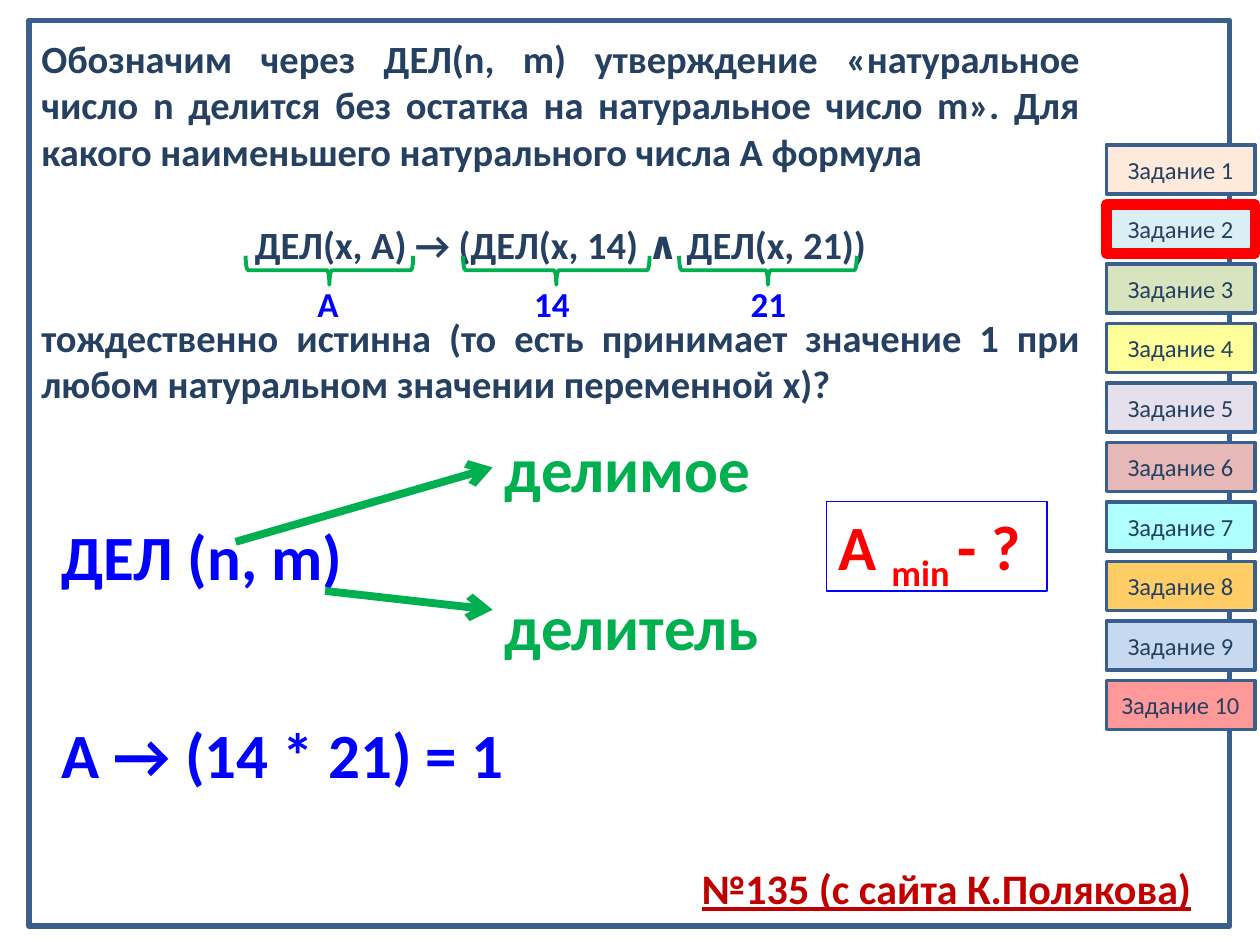
import pptx
import pptx.util
from pptx.dml.color import RGBColor
from pptx.enum.shapes import MSO_CONNECTOR, MSO_SHAPE
from pptx.enum.text import MSO_ANCHOR, MSO_AUTO_SIZE, PP_ALIGN
from pptx.oxml.ns import qn
from lxml import etree

COLS, ROWS = 100, 75
NAVY, STEEL = "254061", "3A5F8C"
BLUE, GREEN, RED, CRIMSON = "0000FF", "00B050", "FF0000", "C00000"

prs = pptx.Presentation()
prs.slide_width = pptx.util.Inches(10)
prs.slide_height = pptx.util.Inches(7.5)
s = prs.slides.add_slide(prs.slide_layouts[6])


def rgb(color):
    return RGBColor.from_string(color)


def grid(x, y):
    """Turn columns and rows into slide lengths."""
    return round(prs.slide_width * x / COLS), round(prs.slide_height * y / ROWS)


def put_text(sp, text, size=36, color=BLUE, bold=True, underline=False,
             align=PP_ALIGN.LEFT, before=0, after=0, baseline=0, new=True):
    """Add a formatted run, in a new paragraph unless new is False."""
    tf = sp.text_frame
    p = tf.paragraphs[-1]
    if new:
        if p.runs:
            p = tf.add_paragraph()
        p.alignment = align
        p.space_before, p.space_after = pptx.util.Pt(before), pptx.util.Pt(after)
    r = p.add_run()
    r.text = text
    r.font.name, r.font.size = "Calibri", pptx.util.Pt(size)
    r.font.bold, r.font.underline = bold, underline
    r.font.color.rgb = rgb(color)
    if baseline:
        r.font._element.set("baseline", str(baseline * 1000))


def add_text(x, y, w, h, text=None, wrap=True, **fmt):
    sp = s.shapes.add_textbox(*grid(x, y), *grid(w, h))
    sp.text_frame.word_wrap = wrap
    sp.text_frame.auto_size = MSO_AUTO_SIZE.SHAPE_TO_FIT_TEXT
    if text:
        put_text(sp, text, **fmt)
    return sp


def add_shape(kind, x, y, w, h, line, width, fill=None):
    sp = s.shapes.add_shape(kind, *grid(x, y), *grid(w, h))
    sp.shadow.inherit = False
    if fill:
        sp.fill.solid()
        sp.fill.fore_color.rgb = rgb(fill)
    else:
        sp.fill.background()
    sp.line.color.rgb, sp.line.width = rgb(line), pptx.util.Pt(width)
    return sp


def add_arrow(x1, y1, x2, y2):
    sp = s.shapes.add_connector(MSO_CONNECTOR.STRAIGHT, *grid(x1, y1), *grid(x2, y2))
    sp.line.color.rgb, sp.line.width = rgb(GREEN), pptx.util.Pt(4.5)
    etree.SubElement(sp.line._get_or_add_ln(), qn("a:tailEnd"), type="arrow")
    etree.SubElement(sp._element.spPr, qn("a:effectLst"))


def task_menu(x, y, w, h, current):
    """Column of equally spaced task buttons, the current one outlined in red."""
    fills = ["FDEADA", "DBEEF4", "D7E4BD", "FFFF99", "E6E0EC",
             "E6B9B8", "AFFFFF", "FFCC66", "C6D9F1", "FF9999"]
    button = 3.9
    pitch = (h - button) / (len(fills) - 1)
    for i, fill in enumerate(fills):
        line, width = (RED, 6) if i + 1 == current else (STEEL, 2)
        sp = add_shape(MSO_SHAPE.FLOWCHART_PROCESS, x, y + i * pitch, w, button,
                       line, width, fill)
        sp.text_frame.vertical_anchor = MSO_ANCHOR.MIDDLE
        sp.text_frame.word_wrap = True
        put_text(sp, f"Задание {i + 1}", size=14, color=NAVY, bold=False,
                 align=PP_ALIGN.CENTER)


def statement(x, y, w, h):
    """Problem text with the formula set apart by one line above and below."""
    gap = 26.85
    sp = add_text(x, y, w, h)
    for text, align, space in [
        ("Обозначим через ДЕЛ(n, m) утверждение «натуральное число n делится без "
         "остатка на натуральное число m». Для какого наименьшего натурального "
         "числа А формула", PP_ALIGN.JUSTIFY, 0),
        ("ДЕЛ(x, A) → (ДЕЛ(x, 14) ∧ ДЕЛ(x, 21))", PP_ALIGN.CENTER, gap),
        ("тождественно истинна (то есть принимает значение 1 при любом "
         "натуральном значении переменной х)?", PP_ALIGN.JUSTIFY, 0),
    ]:
        put_text(sp, text, size=22, color=NAVY, align=align, before=space, after=space)


def formula_marks(x, y, w, h):
    """Braces under the three terms, with a short label below each."""
    depth, label_w, label_h = 2.3, 7.8, 4.4
    pitch = (w - label_w) / 2
    terms = [("А", 26.15, 13.3), ("14", 44.15, 14.8), ("21", 60.95, 14.1)]
    for i, (label, center, span) in enumerate(terms):
        # An upright brace turned about its own centre
        sp = add_shape(MSO_SHAPE.LEFT_BRACE, center - depth / 2,
                       y + depth / 2 - span / 2, depth, span, GREEN, 2.25)
        sp.rotation = 270
        add_text(x + i * pitch, y + h - label_h, label_w, label_h, label, size=20)


def division_scheme(x, y, w, h):
    """ДЕЛ (n, m) with arrows to the names of its two arguments."""
    right, row = x + 35.2, 7.1
    add_text(x, y + 7, 24.5, row, "ДЕЛ (n, m)", wrap=False)
    add_text(right, y, w - 35.2, row, "делимое", wrap=False, color=GREEN)
    add_text(right, y + h - row, w - 35.2, row, "делитель", wrap=False, color=GREEN)
    add_arrow(x + 14.8, y + 9.4, right, y + 3.5)
    add_arrow(x + 21.9, y + 13.3, right, y + 14.8)


def question(x, y, w, h):
    """Framed question with a subscript."""
    sp = add_shape(MSO_SHAPE.RECTANGLE, x, y, w, h, BLUE, 0.75)
    sp.text_frame.word_wrap = True
    sp.text_frame.vertical_anchor = MSO_ANCHOR.TOP
    put_text(sp, "А ", color=RED)
    put_text(sp, "min ", color=RED, baseline=-25, new=False)
    put_text(sp, "- ?", color=RED, new=False)


# Frame and menu
add_shape(MSO_SHAPE.RECTANGLE, 2.3, 1.6, 95.3, 71.9, STEEL, 3)
task_menu(87.8, 11.5, 11.8, 46.4, current=2)

# Problem
statement(2.3, 2.3, 84.4, 34.2)
formula_marks(24.2, 20.3, 42.2, 6)

# Solution
division_scheme(3.9, 33.6, 57.6, 19.6)
question(65.6, 39.8, 17.5, 7.1)
add_text(3.9, 56.3, 39.1, 7.1, "А → (14 * 21) = 1")

# Reference
add_text(54.7, 68, 41.4, 5, "№135 (с сайта К.Полякова)", size=24, color=CRIMSON,
         underline=True, align=PP_ALIGN.JUSTIFY)

prs.save("out.pptx")
